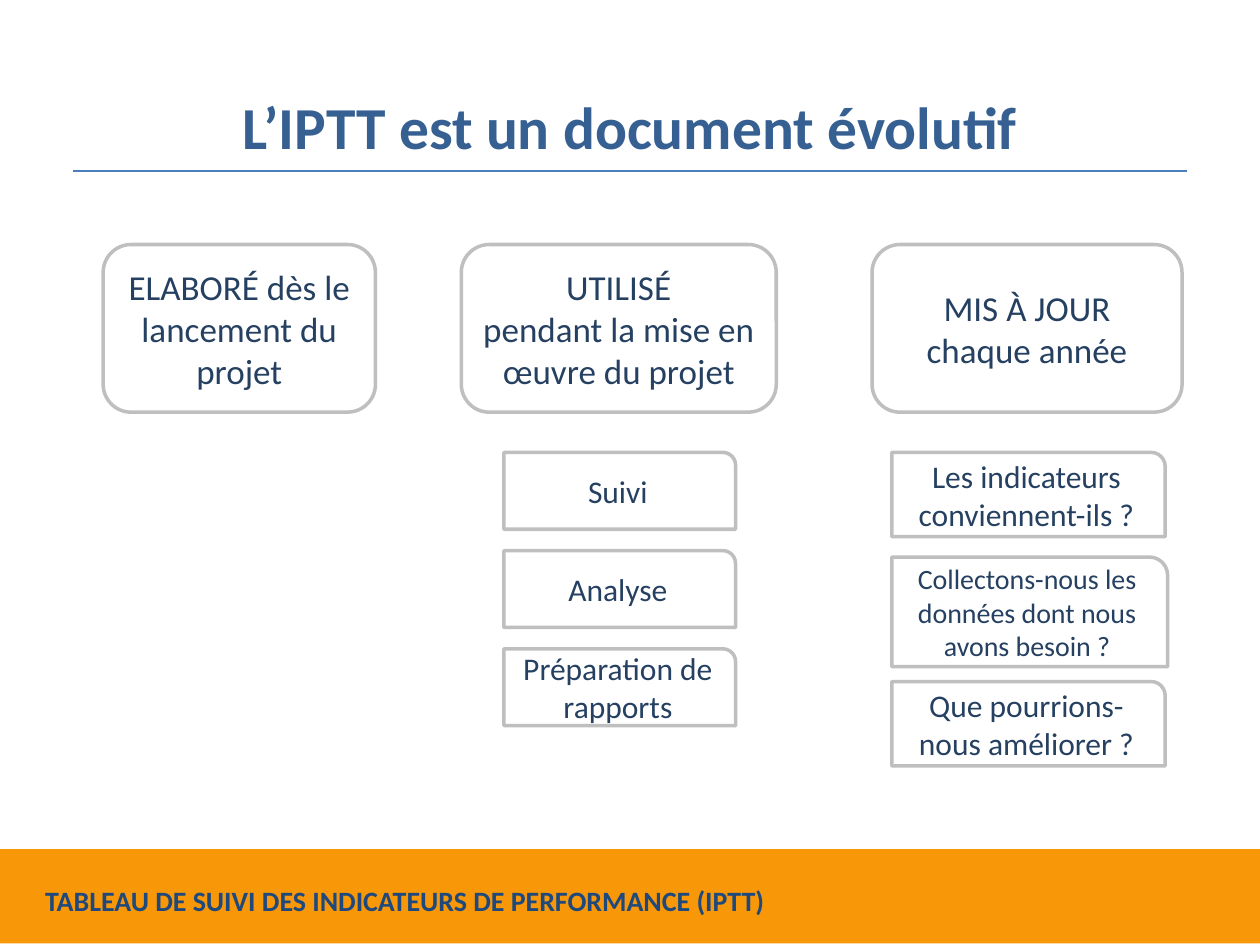
from lxml.etree import SubElement
from pptx import Presentation
from pptx.dml.color import RGBColor
from pptx.enum.shapes import MSO_CONNECTOR, MSO_SHAPE
from pptx.enum.text import MSO_ANCHOR, PP_ALIGN
from pptx.oxml.ns import qn
from pptx.util import Cm, Pt

NAVY = RGBColor(0x25, 0x40, 0x61)
TITLE_BLUE = RGBColor(0x37, 0x60, 0x92)
FOOTER_BLUE = RGBColor(0x1F, 0x49, 0x7D)
RULE_BLUE = RGBColor(0x4B, 0x7E, 0xBC)
GREY = RGBColor(0xBF, 0xBF, 0xBF)
ORANGE = RGBColor(0xF8, 0x97, 0x08)

HEAD_HEIGHT = 3.38
STEP_HEIGHT = 1.55
QUESTION_HEIGHT = 1.7


def write(holder, text, size=18, color=NAVY, bold=False,
          align=PP_ALIGN.CENTER, anchor=MSO_ANCHOR.MIDDLE):
    frame = holder.text_frame
    frame.word_wrap = True
    frame.vertical_anchor = anchor
    for index, line in enumerate(text.split("\n")):
        paragraph = frame.paragraphs[0] if index == 0 else frame.add_paragraph()
        paragraph.alignment = align
        run = paragraph.add_run()
        run.text = line
        run.font.name = "Calibri"
        run.font.size = Pt(size)
        run.font.bold = bold
        run.font.color.rgb = color


def add_card(slide, preset, box, text, size):
    card = slide.shapes.add_shape(preset, *map(Cm, box))
    card.shadow.inherit = False
    card.fill.background()
    card.line.color.rgb = GREY
    card.line.width = Pt(2)
    write(card, text, size=size)


def add_title(slide, left, top, width, height):
    title = slide.shapes.add_textbox(Cm(left), Cm(top), Cm(width), Cm(height))
    write(title, "L’IPTT est un document évolutif", size=34, color=TITLE_BLUE, bold=True)
    rule_y = Cm(top + 2.18)
    rule = slide.shapes.add_connector(
        MSO_CONNECTOR.STRAIGHT, Cm(left + 0.2), rule_y, Cm(left + width - 0.2), rule_y)
    rule.line.color.rgb = RULE_BLUE
    rule.line.width = Pt(0.75)
    SubElement(rule._element.spPr, qn("a:effectLst"))


def add_phase(slide, left, top, width, heading, indent=0, steps=()):
    add_card(slide, MSO_SHAPE.ROUNDED_RECTANGLE,
             (left, top, width, HEAD_HEIGHT), heading, 20)
    for text, offset, step_width, step_height, size in steps:
        add_card(slide, MSO_SHAPE.ROUND_1_RECTANGLE,
                 (left + indent, top + offset, step_width, step_height), text, size)


def add_footer(slide, left, top, width, height):
    band = slide.shapes.add_shape(
        MSO_SHAPE.RECTANGLE, Cm(left), Cm(top), Cm(width), Cm(height))
    band.shadow.inherit = False
    band.fill.solid()
    band.fill.fore_color.rgb = ORANGE
    band.line.fill.background()
    caption = slide.shapes.add_textbox(Cm(left + 0.66), Cm(top + 0.56), Cm(22.43), Cm(1))
    write(caption, "TABLEAU DE SUIVI DES INDICATEURS DE PERFORMANCE (IPTT)", size=16,
          color=FOOTER_BLUE, bold=True, align=PP_ALIGN.LEFT, anchor=MSO_ANCHOR.TOP)


def main():
    deck = Presentation()
    deck.slide_width, deck.slide_height = Cm(25.4), Cm(19.05)
    slide = deck.slides.add_slide(deck.slide_layouts[6])

    add_footer(slide, 0, 17.12, 25.4, 1.9)
    add_title(slide, 1.27, 1.27, 22.86, 2.54)

    uses = [(text, 4.19 + 1.98 * row, 4.67, STEP_HEIGHT, 18)
            for row, text in enumerate(("Suivi", "Analyse", "Préparation de rapports"))]
    questions = [
        ("Les indicateurs conviennent-ils ?", 4.19, 5.51, QUESTION_HEIGHT, 18),
        ("Collectons-nous les données dont nous avons besoin ?", 6.3, 5.56, 2.21, 16),
        ("Que pourrions-nous améliorer ?", 8.81, 5.51, QUESTION_HEIGHT, 18),
    ]
    phases_top = 4.93
    add_phase(slide, 2.08, phases_top, 5.49, "ELABORÉ dès le lancement du projet")
    add_phase(slide, 9.3, phases_top, 6.35,
              "UTILISÉ\npendant la mise en œuvre du projet", indent=0.86, steps=uses)
    add_phase(slide, 17.58, phases_top, 6.25,
              "MIS À JOUR chaque année", indent=0.4, steps=questions)

    deck.save("out.pptx")


if __name__ == "__main__":
    main()
